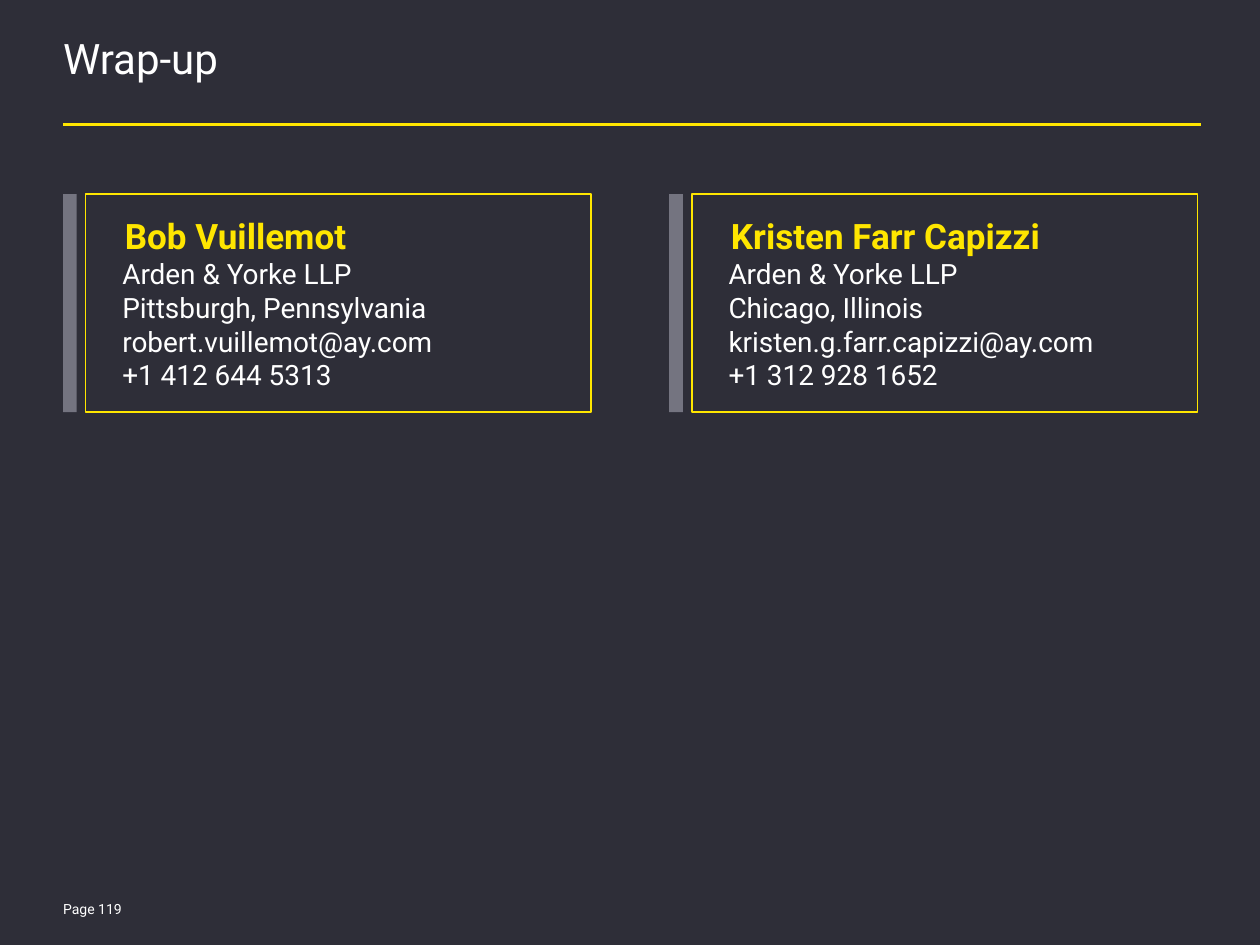
from pptx import Presentation
from pptx.dml.color import RGBColor
from pptx.enum import shapes, text
from pptx.oxml import ns, xmlchemy
from pptx.util import Pt

COLOURS = {"ground": "2E2E38", "accent": "FFE600", "bar": "747480", "text": "FFFFFF"}
FONT = "Roboto"
MARGIN = 36
CARD_TOP, CARD_WIDTH, CARD_HEIGHT = 110.9, 288.7, 124.6
BAR_WIDTH, CARD_OFFSET, CARD_PITCH = 7.8, 13, 346.4
CONTACTS = [
    ("Bob Vuillemot", ["Arden & Yorke LLP", "Pittsburgh, Pennsylvania",
                       "robert.vuillemot@ay.com", "+1 412 644 5313"]),
    ("Kristen Farr Capizzi", ["Arden & Yorke LLP", "Chicago, Illinois",
                              "kristen.g.farr.capizzi@ay.com", "+1 312 928 1652"]),
]


def colour(name):
    return RGBColor.from_string(COLOURS[name])


def place(shape, left, top, width, height):
    shape.left, shape.top = Pt(left), Pt(top)
    shape.width, shape.height = Pt(width), Pt(height)


def format_frame(frame, anchor):
    frame.margin_left = frame.margin_right = frame.margin_top = frame.margin_bottom = 0
    frame.word_wrap = True
    frame.auto_size = text.MSO_AUTO_SIZE.NONE
    frame.vertical_anchor = anchor


def write(para, words, size, colour_name="text", bold=False, indent=0):
    para.text = words
    para.alignment = text.PP_ALIGN.LEFT
    properties = para._p.get_or_add_pPr()
    properties.set("marL", str(Pt(indent)))
    properties.set("indent", "0")
    font = para.font
    font.name, font.size, font.bold = FONT, Pt(size), bold
    font.color.rgb = colour(colour_name)


def add_title(slide, words):
    title = slide.shapes.title
    place(title, MARGIN, 23, 648, 46.8)
    format_frame(title.text_frame, text.MSO_ANCHOR.TOP)
    para = title.text_frame.paragraphs[0]
    write(para, words, 24)
    para.line_spacing = 0.85


def add_rule(slide, left, right, height):
    rule = slide.shapes.add_connector(
        shapes.MSO_CONNECTOR.STRAIGHT, Pt(left), Pt(height), Pt(right), Pt(height))
    rule.line.color.rgb = colour("accent")
    rule.line.width = Pt(1.5)
    rule._element.spPr.append(xmlchemy.OxmlElement("a:effectLst"))


def add_rectangle(slide, left, top, width, height, fill=None, line=None):
    box = slide.shapes.add_shape(
        shapes.MSO_SHAPE.RECTANGLE, Pt(left), Pt(top), Pt(width), Pt(height))
    box.shadow.inherit = False
    if fill:
        box.fill.solid()
        box.fill.fore_color.rgb = colour(fill)
    else:
        box.fill.background()
    if line:
        box.line.color.rgb = colour(line)
        box.line.width = Pt(0.75)
    else:
        box.line.fill.background()
    return box


def add_contact(slide, left, name, details):
    """Add a framed contact card with a grey bar on its left."""
    add_rectangle(slide, left, CARD_TOP, BAR_WIDTH, CARD_HEIGHT, fill="bar")
    card = add_rectangle(slide, left + CARD_OFFSET, CARD_TOP, CARD_WIDTH, CARD_HEIGHT,
                         line="accent")
    frame = card.text_frame
    format_frame(frame, text.MSO_ANCHOR.MIDDLE)
    write(frame.paragraphs[0], name, 20, "accent", bold=True, indent=22.3)
    for detail in details:
        write(frame.add_paragraph(), detail, 16, indent=20.9)


def add_page_label(slide, words):
    box = slide.shapes.add_textbox(Pt(MARGIN), Pt(512), Pt(46), Pt(14.4))
    format_frame(box.text_frame, text.MSO_ANCHOR.MIDDLE)
    write(box.text_frame.paragraphs[0], words, 8)


def main():
    deck = Presentation()
    deck.slide_width, deck.slide_height = Pt(720), Pt(540)
    slide = deck.slides.add_slide(deck.slide_layouts[5])
    slide.background.fill.solid()
    slide.background.fill.fore_color.rgb = colour("ground")

    add_title(slide, "Wrap-up")
    add_rule(slide, MARGIN, 686.2, 71.3)
    for index, (name, details) in enumerate(CONTACTS):
        add_contact(slide, MARGIN + index * CARD_PITCH, name, details)
    add_page_label(slide, "Page 119")
    deck.save("out.pptx")


if __name__ == "__main__":
    main()
